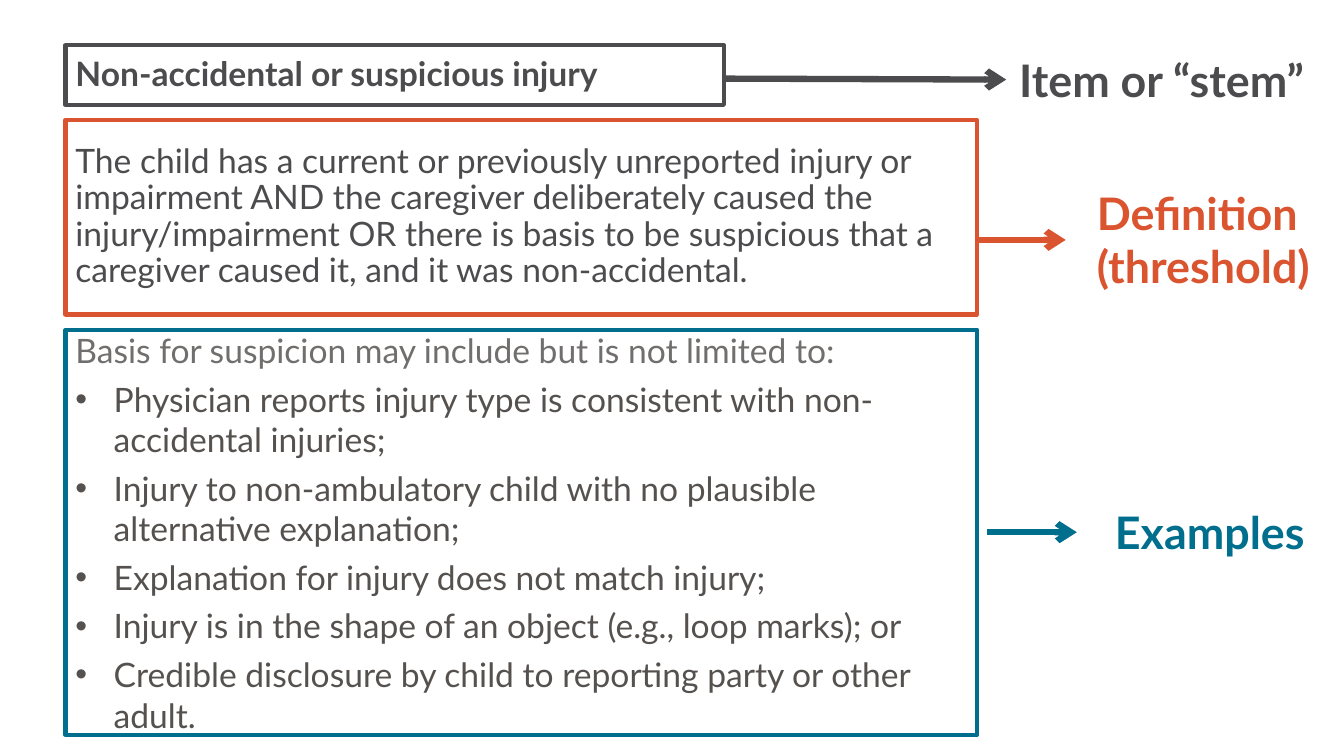
"""Build a slide that labels the stem, definition and examples of an assessment item."""
from lxml.etree import SubElement
from pptx import Presentation
from pptx.dml.color import RGBColor
from pptx.enum.shapes import MSO_CONNECTOR, MSO_SHAPE
from pptx.enum.text import MSO_ANCHOR, MSO_AUTO_SIZE, PP_ALIGN
from pptx.oxml.ns import qn
from pptx.util import Pt

PX = 9144
GRAY, ORANGE, TEAL = "4C4C4E", "D9542F", "006E8D"
INTRO_GRAY, BULLET_GRAY = "716F6D", "55514E"
INDENT = 38


def color(value):
    return RGBColor.from_string(value)


def add_text(para, text, size, text_color, bold=False):
    span = para.add_run()
    span.text = text
    span.font.name = "Lato"
    span.font.size = Pt(size)
    span.font.bold = bold
    span.font.color.rgb = color(text_color)


deck = Presentation()
deck.slide_width = 1333 * PX
deck.slide_height = 750 * PX
page = deck.slides.add_slide(deck.slide_layouts[6])

stem = "Non-accidental or suspicious injury"
definition = (
    "The child has a current or previously unreported injury or impairment AND "
    "the caregiver deliberately caused the injury/impairment OR there is basis to be "
    "suspicious that a caregiver caused it, and it was non-accidental."
)
intro = "Basis for suspicion may include but is not limited to:"
examples = [
    "Physician reports injury type is consistent with non-accidental injuries;",
    "Injury to non-ambulatory child with no plausible alternative explanation;",
    "Explanation for injury does not match injury;",
    "Injury is in the shape of an object (e.g., loop marks); or",
    "Credible disclosure by child to reporting party or other adult.",
]

frames = []
for top, width, height, line_color in [
    (45, 653, 59, GRAY),
    (119, 904, 193, ORANGE),
    (327, 904, 402, TEAL),
]:
    box = page.shapes.add_shape(
        MSO_SHAPE.RECTANGLE, 65 * PX, top * PX, width * PX, height * PX
    )
    box.shadow.inherit = False
    box.fill.background()
    box.line.color.rgb = color(line_color)
    box.line.width = Pt(3)
    box.text_frame.word_wrap = True
    box.text_frame.vertical_anchor = MSO_ANCHOR.MIDDLE
    box.text_frame.paragraphs[0].alignment = PP_ALIGN.LEFT
    frames.append(box.text_frame)

for frame, text, bold in zip(frames, (stem, definition), (True, False)):
    frame.paragraphs[0].line_spacing = 0.9
    add_text(frame.paragraphs[0], text, 24, GRAY, bold)

add_text(frames[2].paragraphs[0], intro, 24, INTRO_GRAY)
for example in examples:
    para = frames[2].add_paragraph()
    para.alignment = PP_ALIGN.LEFT
    para.space_before = Pt(6)
    properties = para._p.get_or_add_pPr()
    properties.set("marL", str(INDENT * PX))
    properties.set("indent", str(-INDENT * PX))
    SubElement(properties, qn("a:buFont"), typeface="Arial")
    SubElement(properties, qn("a:buChar"), char="•")
    add_text(para, example, 24, BULLET_GRAY)

for left, top, width, height, lines, label_color in [
    (1001, 47, 333, 64, ["Item or “stem”"], GRAY),
    (1078, 179, 255, 118, ["Definition", "(threshold)"], ORANGE),
    (1096, 496, 219, 64, ["Examples"], TEAL),
]:
    label = page.shapes.add_textbox(left * PX, top * PX, width * PX, height * PX)
    frame = label.text_frame
    frame.word_wrap = False
    frame.auto_size = MSO_AUTO_SIZE.SHAPE_TO_FIT_TEXT
    for index, text in enumerate(lines):
        para = frame.add_paragraph() if index else frame.paragraphs[0]
        add_text(para, text, 32, label_color, True)

for start_x, start_y, end_x, end_y, arrow_color in [
    (718, 78, 998, 79, GRAY),
    (969, 238, 1057, 238, ORANGE),
    (979, 528, 1068, 528, TEAL),
]:
    arrow = page.shapes.add_connector(
        MSO_CONNECTOR.STRAIGHT, start_x * PX, start_y * PX, end_x * PX, end_y * PX
    )
    arrow.line.color.rgb = color(arrow_color)
    arrow.line.width = Pt(4.5)
    SubElement(arrow.line._get_or_add_ln(), qn("a:tailEnd"), type="arrow")
    SubElement(arrow._element.spPr, qn("a:effectLst"))

deck.save("out.pptx")
